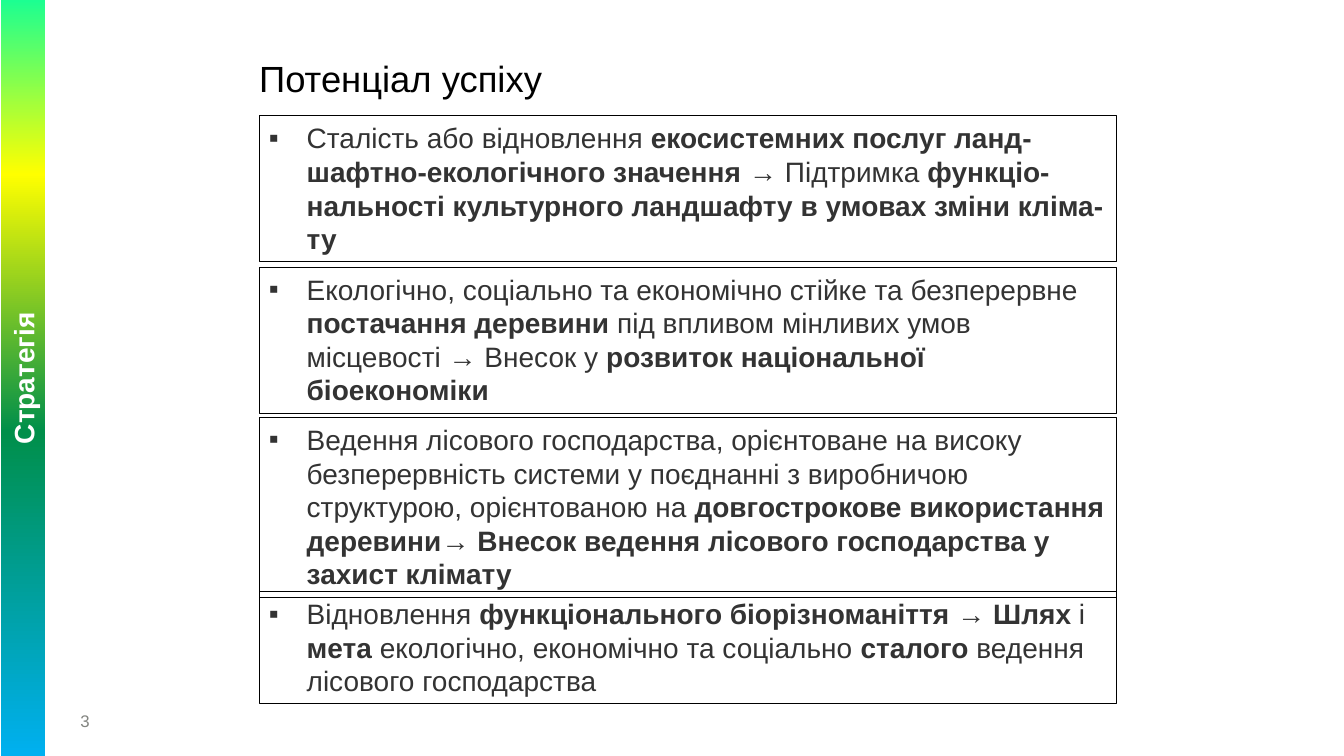
import pptx
import pptx.util
import pptx.dml.color
import pptx.enum.shapes
import pptx.enum.text
import pptx.oxml
import pptx.oxml.ns

Cm = pptx.util.Cm
Pt = pptx.util.Pt
ANCHOR = pptx.enum.text.MSO_ANCHOR
ALIGN = pptx.enum.text.PP_ALIGN
AUTO = pptx.enum.text.MSO_AUTO_SIZE
RECT = pptx.enum.shapes.MSO_SHAPE.RECTANGLE

COLOURS = {"title": "000000", "text": "333333", "number": "828480", "label": "FFFFFF", "line": "000000"}
BAR_STOPS = {0: "00B0F0", 43: "008F4A", 77: "FFFF00", 100: "1CFF91"}
NO_INSETS = {"margin_left": 0, "margin_right": 0, "margin_top": 0, "margin_bottom": 0}
LEFT, WIDTH = 6.53, 21.62
LINE_HEIGHT, PADDING = 0.85, 0.28

# Runs alternate between regular and bold, starting with regular.
POTENTIALS = [
    (2.92, 4, ["Сталість або відновлення ",
               "екосистемних послуг ланд-шафтно-екологічного значення ",
               "→ Підтримка ",
               "функціо-нальності культурного ландшафту в умовах зміни кліма-ту"]),
    (6.73, 4, ["Екологічно, соціально та економічно стійке та безперервне ",
               "постачання деревини ",
               "під впливом мінливих умов місцевості → Внесок у ",
               "розвиток національної біоекономіки"]),
    (10.52, 5, ["Ведення лісового господарства, орієнтоване на високу безперервність системи "
                "у поєднанні з виробничою структурою, орієнтованою на ",
                "довгострокове використання деревини",
                "→ ",
                "Внесок ведення лісового господарства у захист клімату"]),
    (14.91, 3, ["Відновлення ", "функціонального біорізноманіття ", "→ ", "Шлях", " і ", "мета",
                " екологічно, економічно та соціально ", "сталого",
                " ведення лісового господарства"]),
]


def assign(obj, values):
    for name, value in values.items():
        setattr(obj, name, value)


def place(sp, left, top, width, height):
    assign(sp, {"left": Cm(left), "top": Cm(top), "width": Cm(width), "height": Cm(height)})


def add_run(p, text, size, colour, bold=False):
    r = p.add_run()
    r.text = text
    assign(r.font, {"name": "Arial", "size": Pt(size), "bold": bold})
    r.font.color.rgb = pptx.dml.color.RGBColor.from_string(COLOURS[colour])


def add_bullet(p):
    pPr = p._p.get_or_add_pPr()
    assign_indent = {"marL": Cm(0.95), "indent": -Cm(0.95)}
    for name, value in assign_indent.items():
        pPr.set(name, str(value))
    for tag, name, value in (("a:buFont", "typeface", "Arial"), ("a:buChar", "char", "▪")):
        pptx.oxml.ns.qn(tag)
        pPr.append(pptx.oxml.parse_xml(f'<{tag} {pptx.oxml.ns.nsdecls("a")} {name}="{value}"/>'))


def add_rectangle(s, left, top, width, height):
    sp = s.shapes.add_shape(RECT, Cm(left), Cm(top), Cm(width), Cm(height))
    sp.shadow.inherit = False
    assign(sp.text_frame, {"word_wrap": True, "auto_size": AUTO.SHAPE_TO_FIT_TEXT})
    return sp


def add_title(s, text):
    sp = s.shapes.title
    place(sp, LEFT, 1.12, 18.49, 1.4)
    tf = sp.text_frame
    assign(tf, {**NO_INSETS, "vertical_anchor": ANCHOR.BOTTOM, "auto_size": AUTO.NONE, "word_wrap": True})
    p = tf.paragraphs[0]
    p.alignment = ALIGN.LEFT
    add_run(p, text, 26, "title")


def add_number(s, text):
    tf = s.shapes.add_textbox(0, Cm(17.3), Cm(2.26), Cm(1.75)).text_frame
    assign(tf, {**NO_INSETS, "vertical_anchor": ANCHOR.MIDDLE, "word_wrap": True})
    p = tf.paragraphs[0]
    p.alignment = ALIGN.RIGHT
    add_run(p, text, 12, "number")


def add_section_bar(s, text):
    sp = add_rectangle(s, -8.94, 8.97, 19.05, 1.12)
    sp.rotation = 270
    sp.line.fill.background()
    sp.fill.gradient()
    sp.fill.gradient_angle = 0
    stops = sp._element.spPr.find(".//" + pptx.oxml.ns.qn("a:gsLst"))
    stops.clear()
    for percent, colour in BAR_STOPS.items():
        stops.append(pptx.oxml.parse_xml(
            f'<a:gs {pptx.oxml.ns.nsdecls("a")} pos="{percent * 1000}"><a:srgbClr val="{colour}"/></a:gs>'))
    p = sp.text_frame.paragraphs[0]
    p.alignment = ALIGN.CENTER
    add_run(p, text, 20, "label", True)


def add_potential(s, top, lines, runs):
    sp = add_rectangle(s, LEFT, top, WIDTH, lines * LINE_HEIGHT + PADDING)
    sp.fill.background()
    sp.line.color.rgb = pptx.dml.color.RGBColor.from_string(COLOURS["line"])
    sp.line.width = Pt(0.75)
    sp.text_frame.vertical_anchor = ANCHOR.TOP
    p = sp.text_frame.paragraphs[0]
    p.alignment = ALIGN.LEFT
    add_bullet(p)
    for i, text in enumerate(runs):
        add_run(p, text, 20, "text", i % 2 == 1)


def main():
    prs = pptx.Presentation()
    assign(prs, {"slide_width": Cm(33.87), "slide_height": Cm(19.05)})
    s = prs.slides.add_slide(prs.slide_layouts[5])
    add_title(s, "Потенціал успіху")
    add_number(s, "3")
    add_section_bar(s, "Стратегія")
    for top, lines, runs in POTENTIALS:
        add_potential(s, top, lines, runs)
    prs.save("out.pptx")


if __name__ == "__main__":
    main()
